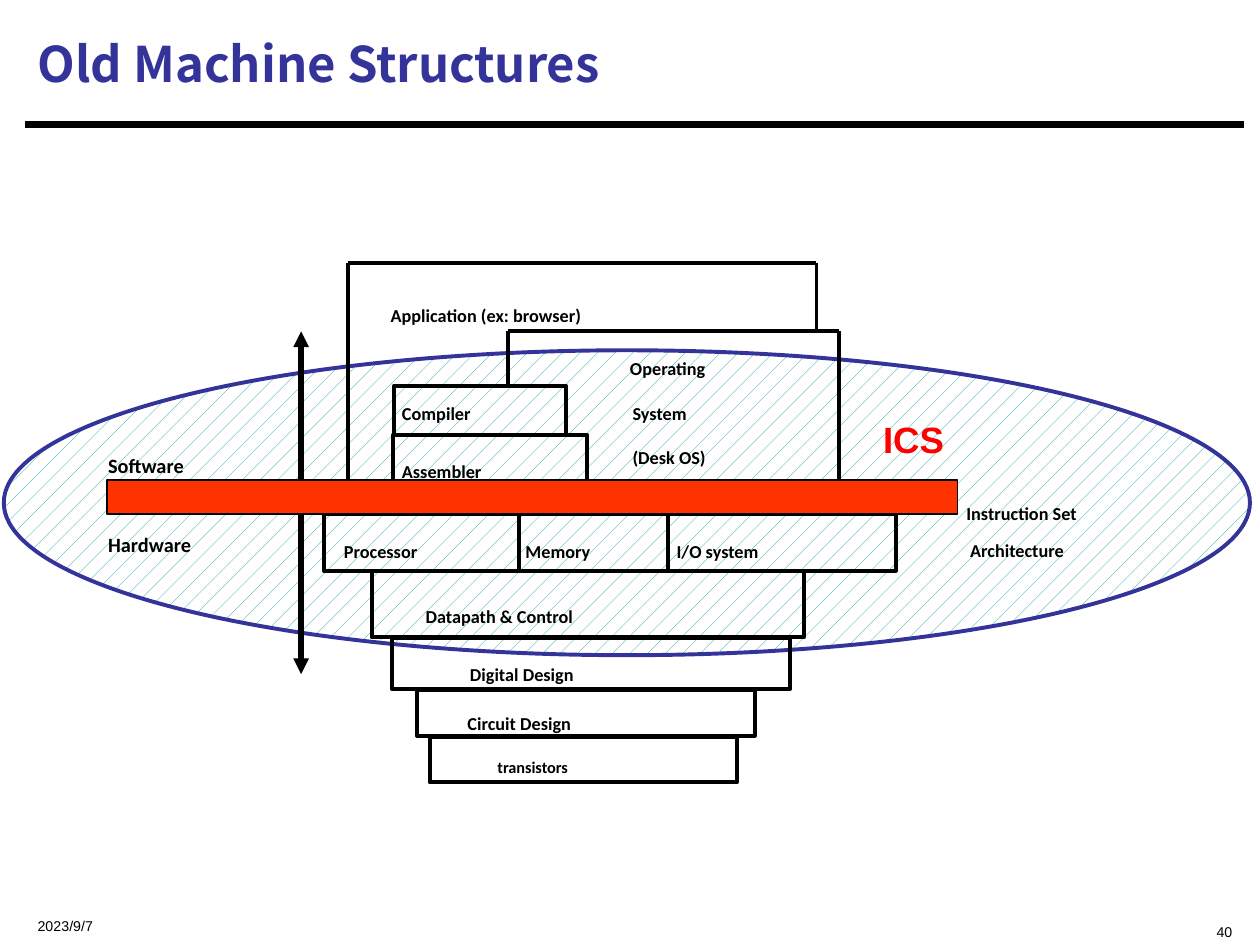
from dataclasses import dataclass
from lxml import etree
from pptx import Presentation
from pptx.dml.color import RGBColor
from pptx.enum.dml import MSO_PATTERN
from pptx.enum.shapes import MSO_CONNECTOR, MSO_SHAPE
from pptx.enum.text import MSO_ANCHOR, MSO_AUTO_SIZE, PP_ALIGN
from pptx.oxml.ns import qn
from pptx.util import Inches, Pt

STRAIGHT = MSO_CONNECTOR.STRAIGHT
RECTANGLE, OVAL = MSO_SHAPE.RECTANGLE, MSO_SHAPE.OVAL
TOP, MIDDLE = MSO_ANCHOR.TOP, MSO_ANCHOR.MIDDLE
LEFT, RIGHT = PP_ALIGN.LEFT, PP_ALIGN.RIGHT
GROW, FIXED = MSO_AUTO_SIZE.SHAPE_TO_FIT_TEXT, MSO_AUTO_SIZE.NONE
SPARSE = MSO_PATTERN.PERCENT_5


@dataclass(frozen=True)
class Theme:
    ink: RGBColor = RGBColor(0x00, 0x00, 0x00)
    paper: RGBColor = RGBColor(0xFF, 0xFF, 0xFF)
    navy: RGBColor = RGBColor(0x33, 0x33, 0x99)
    teal: RGBColor = RGBColor(0x00, 0x99, 0x99)
    orange: RGBColor = RGBColor(0xFF, 0x33, 0x00)
    red: RGBColor = RGBColor(0xFF, 0x00, 0x00)
    title_font: str = "Noto Sans CJK SC"
    label_font: str = "Calibri"
    plain_font: str = "Arial"
    title_size: float = 28
    course_size: float = 36
    side_size: float = 20
    label_size: float = 18
    small_size: float = 16
    footer_size: float = 14
    outline: float = 2.25
    lowered: str = "-25000"


THEME = Theme()
TIGHT = (0.07, 0.03)
ROOMY = (0.1, 0.05)


def add_text(page, text, box, size=THEME.label_size, font=THEME.label_font, color=THEME.ink,
             bold=True, insets=TIGHT, spacing=None, indent=0, anchor=TOP, align=LEFT,
             wrap=True, fit=GROW):
    """Place subscript text; indent applies to the paragraphs after the first."""
    frame = page.shapes.add_textbox(*map(Inches, box)).text_frame
    frame.word_wrap, frame.auto_size, frame.vertical_anchor = wrap, fit, anchor
    frame.margin_left = frame.margin_right = Inches(insets[0])
    frame.margin_top = frame.margin_bottom = Inches(insets[1])
    for index, line in enumerate(text.split("\n")):
        para = frame.add_paragraph() if index else frame.paragraphs[0]
        para.alignment, para.line_spacing = align, spacing
        if index and indent:
            para._p.get_or_add_pPr().set("marL", str(Inches(indent)))
        span = para.add_run()
        span.text = line
        span.font.size, span.font.name, span.font.bold = Pt(size), font, bold
        span.font.color.rgb = color
        span._r.get_or_add_rPr().set("baseline", THEME.lowered)


def add_line(page, start, end, width=THEME.outline, arrow=False):
    line = page.shapes.add_connector(STRAIGHT, *map(Inches, start + end))
    line.line.color.rgb, line.line.width = THEME.ink, Pt(width)
    if arrow:
        etree.SubElement(line.line._get_or_add_ln(), qn("a:tailEnd"), type="triangle")
    etree.SubElement(line._element.spPr, qn("a:effectLst"))


def add_box(page, box, kind=RECTANGLE, line=THEME.ink, width=THEME.outline):
    shape = page.shapes.add_shape(kind, *map(Inches, box))
    shape.shadow.inherit = False
    shape.fill.background()
    shape.line.color.rgb, shape.line.width = line, Pt(width)
    return shape


def add_path(page, points):
    for start, end in zip(points, points[1:]):
        add_line(page, start, end)


def add_heading(page, box):
    left, top, width, height = box
    title = page.shapes.title
    title.left, title.top, title.width, title.height = map(Inches, box)
    frame = title.text_frame
    frame.text, frame.vertical_anchor = "Old Machine Structures", MIDDLE
    para = frame.paragraphs[0]
    para.alignment = LEFT
    font = para.runs[0].font
    font.name, font.size, font.bold = THEME.title_font, Pt(THEME.title_size), True
    font.color.rgb = THEME.navy
    rule = top + height + 0.07
    add_line(page, (left, rule), (left + width, rule), width=3.75)


def add_course_scope(page, box):
    left, top, _, _ = box
    oval = add_box(page, box, kind=OVAL, line=THEME.navy)
    oval.fill.patterned()
    oval.fill.pattern = SPARSE
    oval.fill.fore_color.rgb, oval.fill.back_color.rgb = THEME.teal, THEME.paper
    add_text(page, "ICS", (left + 6.88, top + 0.18, 1.18, 0.71), size=THEME.course_size,
             font=THEME.plain_font, color=THEME.red, insets=ROOMY, anchor=MIDDLE, wrap=False)


def add_software(page, box):
    """Nest the software layers in the box, whose bottom is the instruction set."""
    left, top, width, height = box
    right, bottom = left + width, top + height
    system_left, system_top = left + 1.27, top + 0.54
    add_path(page, [(left, bottom), (left, top), (right, top), (right, system_top)])
    add_path(page, [(system_left, top + 0.97), (system_left, system_top),
                    (right + 0.18, system_top), (right + 0.18, bottom + 0.08)])
    add_box(page, (left + 0.37, top + 0.97, 1.36, 0.39))
    add_box(page, (left + 0.36, top + 1.36, 1.54, 0.39))
    labels = [
        ("Application (ex: browser)", 0.27, 0.12, 3.42, 0.36),
        ("Compiler", 0.36, 0.9, 1.33, 0.36),
        ("Assembler", 0.36, 1.36, 1.63, 0.36),
        ("Operating", 2.17, 0.54, 1.44, 0.36),
        ("System\n(Desk OS)", 2.19, 0.9, 1.51, 0.67),
    ]
    for text, across, down, label_width, label_height in labels:
        add_text(page, text, (left + across, top + down, label_width, label_height),
                 spacing=1.02)


def add_hardware(page, box):
    """Stack the hardware layers downwards; the box is the top layer."""
    left, top, width, height = box
    add_box(page, box)
    for divider in (1.55, 2.73):
        add_line(page, (left + divider, top), (left + divider, top + height))
    for text, across in (("Processor", 0.09), ("Memory", 1.53), ("I/O system", 2.73)):
        add_text(page, text, (left + across, top, 1.5, 0.36), spacing=1.02)

    # text, layer left, top, width, height, label left, label top, format
    tight = dict(spacing=1.02)
    layers = [
        ("Datapath & Control", 0.38, 0.45, 3.43, 0.53, 0.71, 0.51, dict(insets=ROOMY)),
        ("Digital Design", 0.54, 0.98, 3.16, 0.41, 1.09, 0.98, tight),
        ("Circuit Design", 0.74, 1.4, 2.68, 0.36, 1.07, 1.37, tight),
        ("transistors", 0.84, 1.77, 2.44, 0.36, 1.28, 1.73,
         dict(insets=ROOMY, size=THEME.small_size)),
    ]
    for text, across, down, wide, high, label_across, label_down, style in layers:
        add_box(page, (left + across, top + down, wide, high))
        add_text(page, text, (left + label_across, top + label_down, 2, 0.36), **style)


def add_instruction_set(page, box):
    left, top, width, height = box
    bar = add_box(page, box, width=1)
    bar.fill.solid()
    bar.fill.fore_color.rgb = THEME.orange
    add_text(page, "Instruction Set\nArchitecture", (left + width, top, 2.06, 0.57),
             spacing=0.85, indent=0.03)
    for text, down in (("Software", -0.45), ("Hardware", 0.18)):
        add_text(page, text, (left - 0.09, top + down, 1.6, 0.43),
                 size=THEME.side_size, insets=ROOMY)
    axis = left + 1.54
    for start, end in ((top, top - 1.18), (top + height, top + height + 1.27)):
        add_line(page, (axis, start), (axis, end), width=3, arrow=True)


def add_footer(page, box):
    left, top, width, height = box
    style = dict(size=THEME.footer_size, font=THEME.plain_font, bold=False,
                 insets=ROOMY, fit=FIXED)
    add_text(page, "2023/9/7", (left, top, 2.5, height), anchor=MIDDLE, **style)
    add_text(page, "40", (left + width - 3, top, 3, height), align=RIGHT, **style)


def main():
    deck = Presentation()
    deck.slide_width, deck.slide_height = Inches(10), Inches(7.5)
    page = deck.slides.add_slide(deck.slide_layouts[5])
    add_heading(page, (0.2, 0.08, 9.67, 0.84))
    add_course_scope(page, (0.03, 2.78, 9.89, 2.42))
    add_software(page, (2.76, 2.09, 3.72, 1.72))
    add_hardware(page, (2.57, 4.08, 4.54, 0.45))
    add_instruction_set(page, (0.85, 3.81, 6.75, 0.27))
    add_footer(page, (0.2, 7.15, 9.68, 0.27))
    deck.save("out.pptx")


if __name__ == "__main__":
    main()
